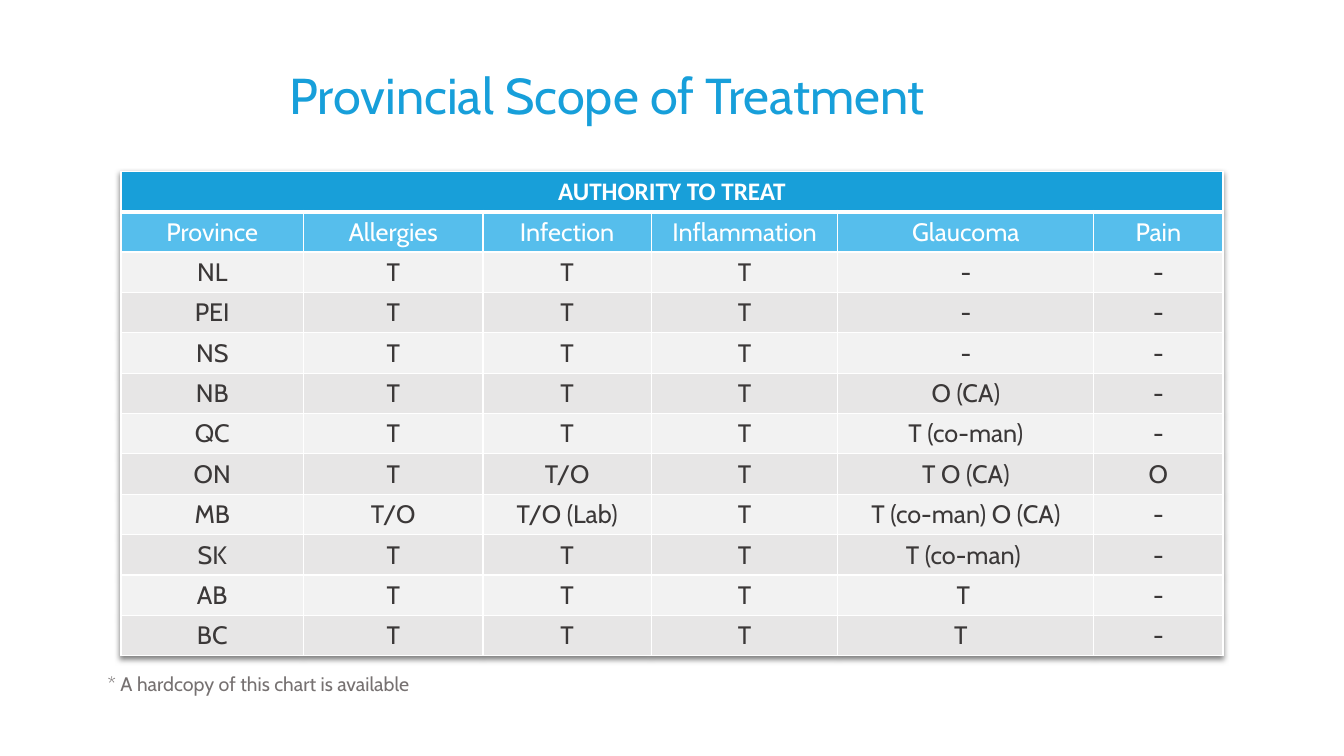
"""Build the slide showing each province's authority to treat."""
from lxml.etree import SubElement
from pptx import Presentation
from pptx.dml.color import RGBColor
from pptx.enum.text import MSO_ANCHOR, MSO_AUTO_SIZE, PP_ALIGN
from pptx.oxml import parse_xml
from pptx.oxml.ns import nsdecls, qn
from pptx.util import Inches, Pt

TITLE = "Provincial Scope of Treatment"
NOTE = "* A hardcopy of this chart is available"
BANNER = "AUTHORITY TO TREAT"
HEADINGS = ["Province", "Allergies", "Infection", "Inflammation", "Glaucoma", "Pain"]
PROVINCES = [
    ["NL", "T", "T", "T", "-", "-"],
    ["PEI", "T", "T", "T", "-", "-"],
    ["NS", "T", "T", "T", "-", "-"],
    ["NB", "T", "T", "T", "O (CA)", "-"],
    ["QC", "T", "T", "T", "T (co-man)", "-"],
    ["ON", "T", "T/O", "T", "T O (CA)", "O"],
    ["MB", "T/O", "T/O (Lab)", "T", "T (co-man) O (CA)", "-"],
    ["SK", "T", "T", "T", "T (co-man)", "-"],
    ["AB", "T", "T", "T", "T", "-"],
    ["BC", "T", "T", "T", "T", "-"],
]
GLAUCOMA_SHIFT = {"SK": 0.05, "AB": 0.05, "BC": 0.1}
COLUMN_WIDTHS = [1.81, 1.78, 1.67, 1.85, 2.54, 1.28]
ROW_HEIGHT = 0.4
CELL_MARGIN = 0.1

BLUE = RGBColor(0x17, 0x9F, 0xDA)
BANNER_BLUE = RGBColor(0x18, 0x9F, 0xD9)
SKY = RGBColor(0x56, 0xBE, 0xEC)
WHITE = RGBColor(0xFF, 0xFF, 0xFF)
INK = RGBColor(0x3B, 0x38, 0x38)
GRAY = RGBColor(0x76, 0x71, 0x71)
BANDS = [RGBColor(0xF2, 0xF2, 0xF2), RGBColor(0xE7, 0xE6, 0xE6)]


def style(para, size, color, name="Cabin", bold=False, align=PP_ALIGN.LEFT):
    para.alignment = align
    font = para.font
    font.size, font.name, font.bold = Pt(size), name, bold
    font.color.rgb = color


def write_line(box, place, text, size, color):
    box.left, box.top, box.width, box.height = map(Inches, place)
    frame = box.text_frame
    frame.text = text
    frame.word_wrap = False
    frame.auto_size = MSO_AUTO_SIZE.SHAPE_TO_FIT_TEXT
    frame.vertical_anchor = MSO_ANCHOR.TOP
    style(frame.paragraphs[0], size, color)


def add_borders(cell, top, bottom):
    properties = cell._tc.get_or_add_tcPr()
    for side, width in {"lnL": 1, "lnR": 1, "lnT": top, "lnB": bottom}.items():
        line = SubElement(properties, qn(f"a:{side}"), w=str(Pt(width)))
        fill = SubElement(line, qn("a:solidFill"))
        SubElement(fill, qn("a:srgbClr"), val=str(WHITE))


def fill_cell(cell, text, fill, color, name="Cabin", bold=False, top=1, bottom=1):
    add_borders(cell, top, bottom)
    cell.fill.solid()
    cell.fill.fore_color.rgb = fill
    cell.text = text
    style(cell.text_frame.paragraphs[0], 18, color, name, bold, PP_ALIGN.CENTER)


def add_treatment_table(slide):
    rows = len(PROVINCES) + 2
    table = slide.shapes.add_table(
        rows, len(HEADINGS), Inches(1.2), Inches(1.7),
        Inches(sum(COLUMN_WIDTHS)), Inches(rows * ROW_HEIGHT)).table
    for column, width in zip(table.columns, COLUMN_WIDTHS):
        column.width = Inches(width)
    for row in table.rows:
        row.height = Inches(ROW_HEIGHT)

    table.cell(0, 0).merge(table.cell(0, len(HEADINGS) - 1))
    for index, heading in enumerate(HEADINGS):
        fill_cell(table.cell(0, index), "" if index else BANNER,
                  BANNER_BLUE, WHITE, "Calibri", True, bottom=3)
        fill_cell(table.cell(1, index), heading, SKY, WHITE, top=3)
    for row, values in enumerate(PROVINCES):
        for column, value in enumerate(values):
            fill_cell(table.cell(row + 2, column), value, BANDS[row % 2], INK)
        shift = GLAUCOMA_SHIFT.get(values[0], 0)
        glaucoma = table.cell(row + 2, HEADINGS.index("Glaucoma"))
        glaucoma.margin_right = Inches(CELL_MARGIN + shift)

    table._tbl.tblPr.insert(0, parse_xml(
        f'<a:effectLst {nsdecls("a")}><a:outerShdw blurRad="{Pt(4)}" dist="{Pt(2)}" '
        'dir="5400000" algn="t" rotWithShape="0"><a:srgbClr val="000000">'
        '<a:alpha val="50000"/></a:srgbClr></a:outerShdw></a:effectLst>'))


def main():
    deck = Presentation()
    deck.slide_width, deck.slide_height = Inches(13.33), Inches(7.5)
    slide = deck.slides.add_slide(deck.slide_layouts.get_by_name("Title Only"))
    write_line(slide.shapes.title, (2.77, 0.59, 6.97, 0.71), TITLE, 36, BLUE)
    add_treatment_table(slide)
    note = slide.shapes.add_textbox(0, 0, 0, 0)
    write_line(note, (0.97, 6.62, 3.41, 0.34), NOTE, 14, GRAY)
    deck.save("out.pptx")


if __name__ == "__main__":
    main()
